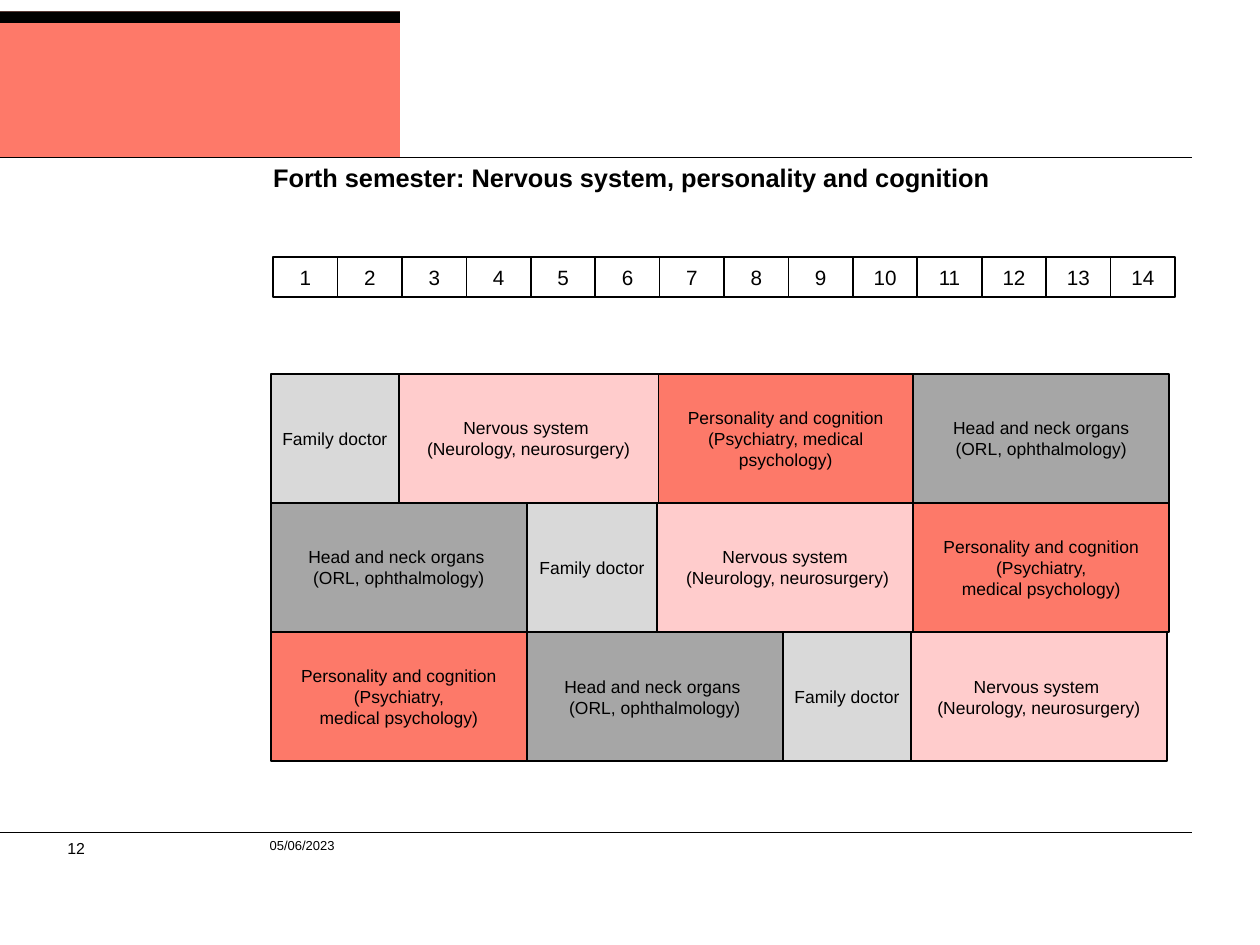
"""Build the fourth semester timetable slide."""
from lxml import etree
from pptx import Presentation
from pptx.dml.color import RGBColor
from pptx.enum import shapes, text
from pptx.oxml import ns
from pptx.util import Inches, Pt

COLORS = {
    "black": "000000",
    "white": "FFFFFF",
    "banner": "FE7969",
    "coral": "FD7969",
    "pink": "FFCCCC",
    "gray": "A6A6A6",
    "light": "D9D9D9",
}


def write_text(shape, content, size, bold=False, align=text.PP_ALIGN.LEFT,
               anchor=text.MSO_ANCHOR.TOP, inset=0, wrap=True):
    frame = shape.text_frame
    frame.text = content
    frame.word_wrap = wrap
    frame.auto_size = text.MSO_AUTO_SIZE.NONE
    frame.vertical_anchor = anchor
    frame.margin_left = frame.margin_right = Inches(inset)
    frame.margin_top = frame.margin_bottom = Inches(inset)
    for paragraph in frame.paragraphs:
        paragraph.alignment = align
        paragraph.space_before = Pt(0)
        paragraph.font.name = "Arial"
        paragraph.font.size = Pt(size)
        paragraph.font.bold = bold
        paragraph.font.color.rgb = RGBColor.from_string(COLORS["black"])


def add_box(parent, left, top, width, height, color, content="", size=11):
    box = parent.shapes.add_shape(shapes.MSO_SHAPE.RECTANGLE, Inches(left),
                                  Inches(top), Inches(width), Inches(height))
    box.shadow.inherit = False
    box.fill.solid()
    box.fill.fore_color.rgb = RGBColor.from_string(COLORS[color])
    if content:
        box.line.color.rgb = RGBColor.from_string(COLORS["black"])
        box.line.width = Pt(1)
        write_text(box, content, size, align=text.PP_ALIGN.CENTER,
                   anchor=text.MSO_ANCHOR.MIDDLE, inset=0.05)
    else:
        box.line.fill.background()


presentation = Presentation()
presentation.slide_width = Inches(28 / 2.54)
presentation.slide_height = Inches(21 / 2.54)
slide = presentation.slides.add_slide(presentation.slide_layouts[5])

add_box(slide, 0, 0.1, 3.5, 1.28, "banner")
add_box(slide, 0, 0.1, 3.5, 0.1, "black")
for rule_top in (1.38, 7.28):
    rule = slide.shapes.add_connector(shapes.MSO_CONNECTOR.STRAIGHT, 0,
                                      Inches(rule_top), Inches(10.43), Inches(rule_top))
    rule.line.color.rgb = RGBColor.from_string(COLORS["black"])
    rule.line.width = Pt(0.3)
    etree.SubElement(rule._element.spPr, ns.qn("a:effectLst"))

doctor = ("light", "Family doctor")
nerves = ("pink", "Nervous system \v(Neurology, neurosurgery)")
organs = ("gray", "Head and neck organs \v(ORL, ophthalmology)")
mind = ("coral", "Personality and cognition (Psychiatry,\nmedical psychology)")
mind_wrapped = ("coral", "Personality and cognition (Psychiatry, medical psychology)")
nerves_indented = ("pink", "Nervous system\v (Neurology, neurosurgery)")
organs_tight = ("gray", "Head and neck organs\v(ORL, ophthalmology)")

tracks = [
    ([2.37, 3.49, 5.76, 7.99, 10.23], [doctor, nerves, mind_wrapped, organs_tight]),
    ([2.37, 4.61, 5.75, 7.99, 10.23], [organs, doctor, nerves_indented, mind]),
    ([2.37, 4.61, 6.85, 7.97, 10.21], [mind, organs, doctor, nerves]),
]
track_height = 1.13
track_group = slide.shapes.add_group_shape()
for row, (edges, courses) in enumerate(tracks):
    for left, right, (color, label) in zip(edges, edges[1:], courses):
        add_box(track_group, left, 3.27 + row * track_height, right - left,
                track_height, color, label)

title = slide.shapes.title
title.left, title.top = Inches(2.39), Inches(1.42)
title.width, title.height = Inches(7.91), Inches(1.07)
write_text(title, "Forth semester: Nervous system, personality and cognition", 16, bold=True)

week_group = slide.shapes.add_group_shape()
week_width = 7.89 / 14
for week in range(14):
    add_box(week_group, 2.39 + week * week_width, 2.25, week_width, 0.35,
            "white", str(week + 1), 13)

page_number = slide.shapes.add_textbox(Inches(0.59), Inches(7.34), Inches(0.17), Inches(0.17))
write_text(page_number, "12", 10, wrap=False)
date = slide.shapes.add_textbox(Inches(2.36), Inches(7.33), Inches(7.18), Inches(0.26))
write_text(date, "05/06/2023", 8.2)

presentation.save("out.pptx")
